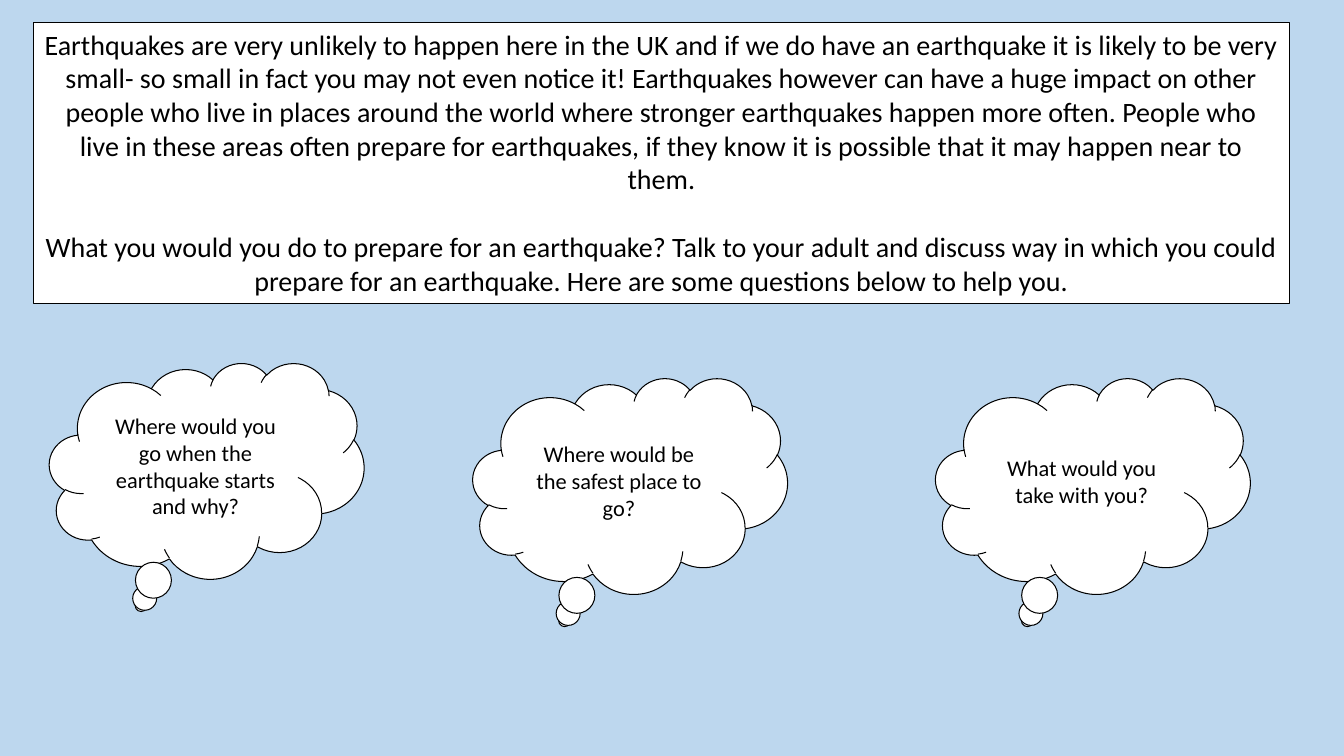
from dataclasses import dataclass

from pptx import Presentation
from pptx.dml.color import RGBColor
from pptx.enum.shapes import MSO_SHAPE as Shape
from pptx.enum.text import MSO_ANCHOR as Anchor, PP_ALIGN as Align
from pptx.util import Emu, Pt

EMU_PER_PX = 9144


@dataclass(frozen=True)
class Theme:
    """Colours, font and type sizes of the slide."""
    sky: RGBColor = RGBColor(0xBD, 0xD7, 0xEE)
    paper: RGBColor = RGBColor(0xFF, 0xFF, 0xFF)
    ink: RGBColor = RGBColor(0x00, 0x00, 0x00)
    font: str = "Calibri"
    intro_size: float = 20
    question_size: float = 16
    paragraph_gap: float = 24.4


THEME = Theme()

INTRO = [
    "Earthquakes are very unlikely to happen here in the UK and if we do have an "
    "earthquake it is likely to be very small- so small in fact you may not even "
    "notice it! Earthquakes however can have a huge impact on other people who live "
    "in places around the world where stronger earthquakes happen more often. People "
    "who live in these areas often prepare for earthquakes, if they know it is "
    "possible that it may happen near to them.",
    "What you would you do to prepare for an earthquake? Talk to your adult and "
    "discuss way in which you could prepare for an earthquake. Here are some "
    "questions below to help you.",
]

QUESTIONS = [
    (49, 360, "Where would you go when the earthquake starts and why?"),
    (469, 375, "Where would be the safest place to go?"),
    (928, 375, "What would you take with you?"),
]


def px(length):
    """Turn whole pixels into EMU."""
    return Emu(length * EMU_PER_PX)


def outline(shape, width):
    """Give a shape a white fill and a thin dark line."""
    shape.fill.solid()
    shape.fill.fore_color.rgb = THEME.paper
    shape.line.color.rgb = THEME.ink
    shape.line.width = Pt(width)


def write(frame, texts, size):
    """Write centred paragraphs with an even gap between them."""
    frame.word_wrap = True
    frame.text = "\n".join(texts)
    for index, para in enumerate(frame.paragraphs):
        para.alignment = Align.CENTER
        if index:
            para.space_before = Pt(THEME.paragraph_gap)
        for span in para.runs:
            span.font.name = THEME.font
            span.font.size = Pt(size)
            span.font.color.rgb = THEME.ink


def add_intro(page, left, top, width, height):
    """Add the framed introduction."""
    box = page.shapes.add_textbox(px(left), px(top), px(width), px(height))
    outline(box, 0.5)
    write(box.text_frame, INTRO, THEME.intro_size)


def add_thought(page, left, top, question):
    """Add a thought cloud holding one question."""
    cloud = page.shapes.add_shape(
        Shape.CLOUD_CALLOUT, px(left), px(top), px(312), px(214))
    cloud.shadow.inherit = False
    outline(cloud, 0.75)
    cloud.text_frame.vertical_anchor = Anchor.MIDDLE
    write(cloud.text_frame, [question], THEME.question_size)


def main():
    """Build the slide and save it."""
    deck = Presentation()
    deck.slide_width, deck.slide_height = px(1333), px(750)
    page = deck.slides.add_slide(deck.slide_layouts[6])
    page.background.fill.solid()
    page.background.fill.fore_color.rgb = THEME.sky
    add_intro(page, 33, 22, 1246, 279)
    for left, top, question in QUESTIONS:
        add_thought(page, left, top, question)
    deck.save("out.pptx")


if __name__ == "__main__":
    main()
